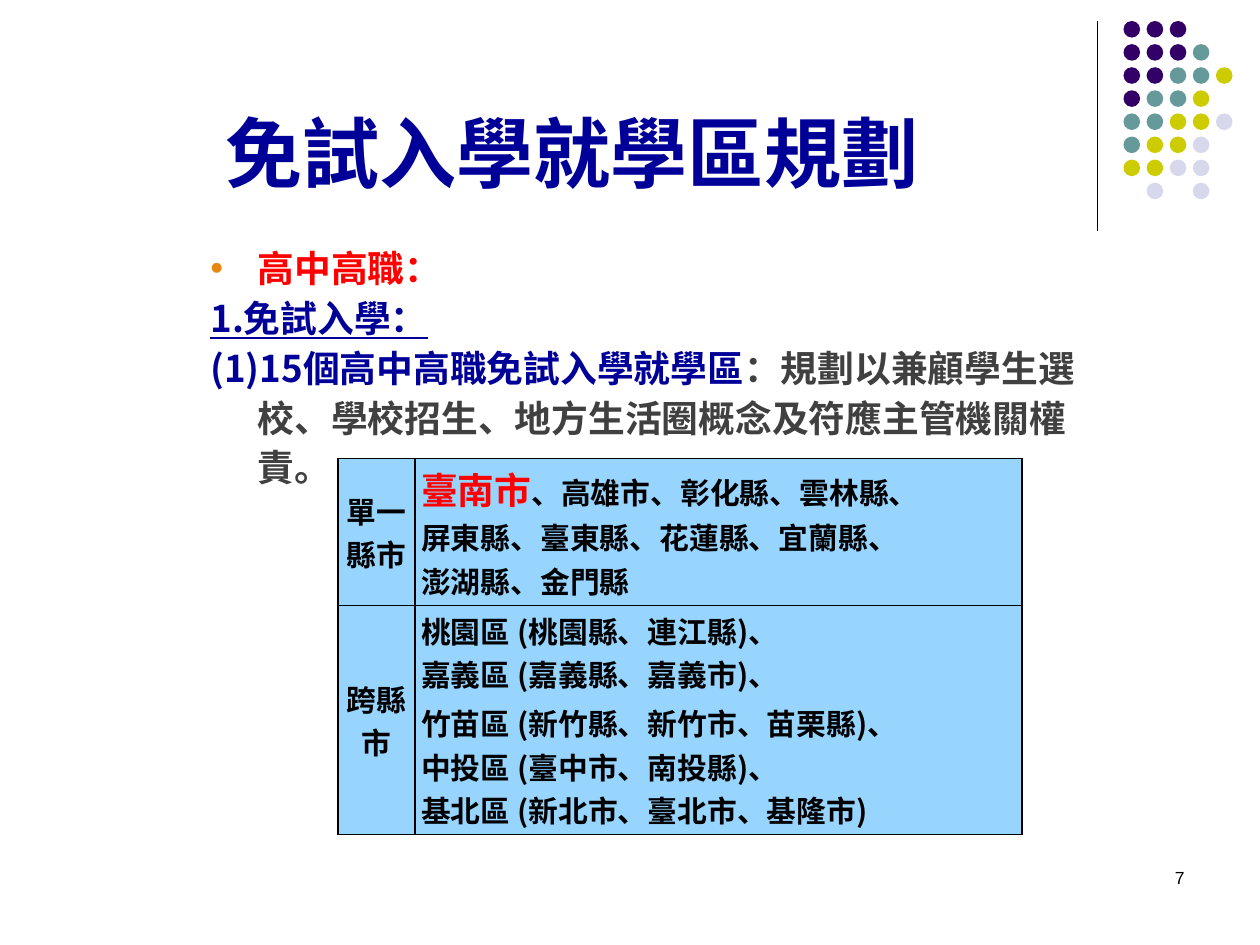
import pptx
import pptx.util
import pptx.dml.color
import pptx.enum.shapes
import pptx.enum.text
import pptx.oxml
import pptx.oxml.ns
from dataclasses import dataclass
from lxml import etree

Pt = pptx.util.Pt
Align = pptx.enum.text.PP_ALIGN
Anchor = pptx.enum.text.MSO_ANCHOR
qn = pptx.oxml.ns.qn


@dataclass(frozen=True)
class Theme:
    cjk: str = "Noto Sans CJK SC"
    latin: str = "Arial"
    navy: str = "000099"
    red: str = "FF0000"
    gray: str = "404040"
    black: str = "000000"
    sky: str = "97D5FF"
    bullet: str = "E78712"
    dots: tuple = ("330066", "669999", "CCCC00", "D8D8EC")
    head: int = 44
    body: int = 21
    cell: int = 17
    page: int = 10


T = Theme()
DOTS = ("000", "0001", "00112", "0112", "11223", "1223", "2233", " 3 3")


def rgb(tone):
    return pptx.dml.color.RGBColor.from_string(tone)


def style(font, size, tone, bold=True, face=T.cjk):
    font.size, font.bold, font.name = Pt(size), bold, face
    font.color.rgb = rgb(tone)
    east = etree.Element(qn("a:ea"), typeface=face)
    font._rPr.find(qn("a:latin")).addnext(east)


def place(shape, box):
    shape.left, shape.top, shape.width, shape.height = map(Pt, box)


def mark(para, sign=None):
    props = para._p.get_or_add_pPr()
    props.set("marL", str(Pt(27)))
    props.set("indent", str(-Pt(27)))
    if sign is None:
        etree.SubElement(props, qn("a:buNone"))
        return
    tint = etree.SubElement(props, qn("a:buClr"))
    etree.SubElement(tint, qn("a:srgbClr"), val=T.bullet)
    etree.SubElement(props, qn("a:buFont"), typeface=T.latin)
    etree.SubElement(props, qn("a:buChar"), char=sign)


def add_dots(slide, box):
    left, top, size, step = box
    group = slide.shapes.add_group_shape()
    for row, line in enumerate(DOTS):
        for col, key in enumerate(line):
            if key == " ":
                continue
            dot = group.shapes.add_shape(
                pptx.enum.shapes.MSO_SHAPE.OVAL,
                Pt(left + col * step), Pt(top + row * step), Pt(size), Pt(size))
            dot.shadow.inherit = False
            dot.fill.solid()
            dot.fill.fore_color.rgb = rgb(T.dots[int(key)])
            dot.line.fill.background()


def add_rule(slide, box):
    left, top, tall = box
    rule = slide.shapes.add_connector(
        pptx.enum.shapes.MSO_CONNECTOR.STRAIGHT,
        Pt(left), Pt(top), Pt(left), Pt(top + tall))
    rule.line.color.rgb = rgb(T.black)
    rule.line.width = Pt(0.75)
    etree.SubElement(rule._element.spPr, qn("a:effectLst"))


def add_title(slide, box):
    title = slide.shapes.title
    place(title, box)
    frame = title.text_frame
    frame.auto_size = pptx.enum.text.MSO_AUTO_SIZE.NONE
    frame.vertical_anchor = Anchor.BOTTOM
    para = frame.paragraphs[0]
    para.text = "免試入學就學區規劃"
    para.alignment = Align.LEFT
    style(para.font, T.head, T.navy)


def add_body(slide, box):
    body = slide.placeholders[1]
    place(body, box)
    frame = body.text_frame
    frame.auto_size = pptx.enum.text.MSO_AUTO_SIZE.NONE
    frame.text = "高中高職：\n1.免試入學："
    first, second = frame.paragraphs
    third = frame.add_paragraph()
    lead = third.add_run()
    lead.text = "(1)15個高中高職免試入學就學區"
    third.add_run().text = "：規劃以兼顧學生選校、學校招生、地方生活圈概念及符應主管機關權責。"
    looks = ((first, 31.5, "•", T.red), (second, 28.5, None, T.navy),
             (third, 28.5, None, T.gray))
    for para, pitch, sign, tone in looks:
        para.line_spacing, para.space_before = Pt(pitch), Pt(0)
        mark(para, sign)
        style(para.font, T.body, tone)
    second.font.underline = True
    lead.font.color.rgb = rgb(T.navy)


def frame_cell(cell):
    props = cell._tc.get_or_add_tcPr()
    for side in ("a:lnL", "a:lnR", "a:lnT", "a:lnB"):
        edge = etree.SubElement(props, qn(side), w=str(Pt(1)))
        fill = etree.SubElement(edge, qn("a:solidFill"))
        etree.SubElement(fill, qn("a:srgbClr"), val=T.black)
    cell.fill.solid()
    cell.fill.fore_color.rgb = rgb(T.sky)
    cell.margin_left = cell.margin_right = Pt(3.6)
    cell.margin_top = cell.margin_bottom = Pt(2)


def fill_cell(cell, paras, align=Align.LEFT, anchor=Anchor.MIDDLE, lead=""):
    frame_cell(cell)
    cell.vertical_anchor = anchor
    frame = cell.text_frame
    for spot, lines in enumerate(paras):
        para = frame.add_paragraph() if spot else frame.paragraphs[0]
        para.alignment = align
        para.space_before = Pt(3.4 if spot else 0)
        style(para.font, T.cell, T.black)
        if lead and not spot:
            run = para.add_run()
            run.text = lead
            style(run.font, T.body, T.red)
        for row, line in enumerate(lines):
            if row:
                para.add_line_break()
            para.add_run().text = line


def add_zones(slide, box):
    table = slide.shapes.add_table(2, 2, *map(Pt, box)).table
    table.first_row = table.horz_banding = False
    for col, wide in zip(table.columns, (44, box[2] - 44)):
        col.width = Pt(wide)
    for row, tall in zip(table.rows, (69, box[3] - 69)):
        row.height = Pt(tall)
    for row, name in enumerate(("單一縣市", "跨縣市")):
        fill_cell(table.cell(row, 0), [[name]], Align.CENTER)
    fill_cell(table.cell(0, 1), [[
        "、高雄市、彰化縣、雲林縣、",
        "屏東縣、臺東縣、花蓮縣、宜蘭縣、",
        "澎湖縣、金門縣"]], lead="臺南市")
    fill_cell(table.cell(1, 1), [
        ["桃園區 (桃園縣、連江縣)、", "嘉義區 (嘉義縣、嘉義市)、"],
        ["竹苗區 (新竹縣、新竹市、苗栗縣)、",
         "中投區 (臺中市、南投縣)、",
         "基北區 (新北市、臺北市、基隆市)"]], anchor=Anchor.TOP)


def add_page(slide, box):
    frame = slide.shapes.add_textbox(*map(Pt, box)).text_frame
    frame.word_wrap = True
    para = frame.paragraphs[0]
    para.text = "7"
    para.alignment = Align.RIGHT
    style(para.font, T.page, T.black, False, T.latin)


def main():
    deck = pptx.Presentation()
    deck.slide_width, deck.slide_height = Pt(720), Pt(540)
    slide = deck.slides.add_slide(deck.slide_layouts[1])
    add_rule(slide, (627, 12, 120))
    add_dots(slide, (642, 12, 9.5, 13.2))
    add_title(slide, (121.5, 66, 429, 51))
    add_body(slide, (113, 130.5, 510.5, 331))
    add_zones(slide, (193, 262, 391, 187))
    add_page(slide, (516, 492, 168, 36))
    deck.save("out.pptx")


if __name__ == "__main__":
    main()
